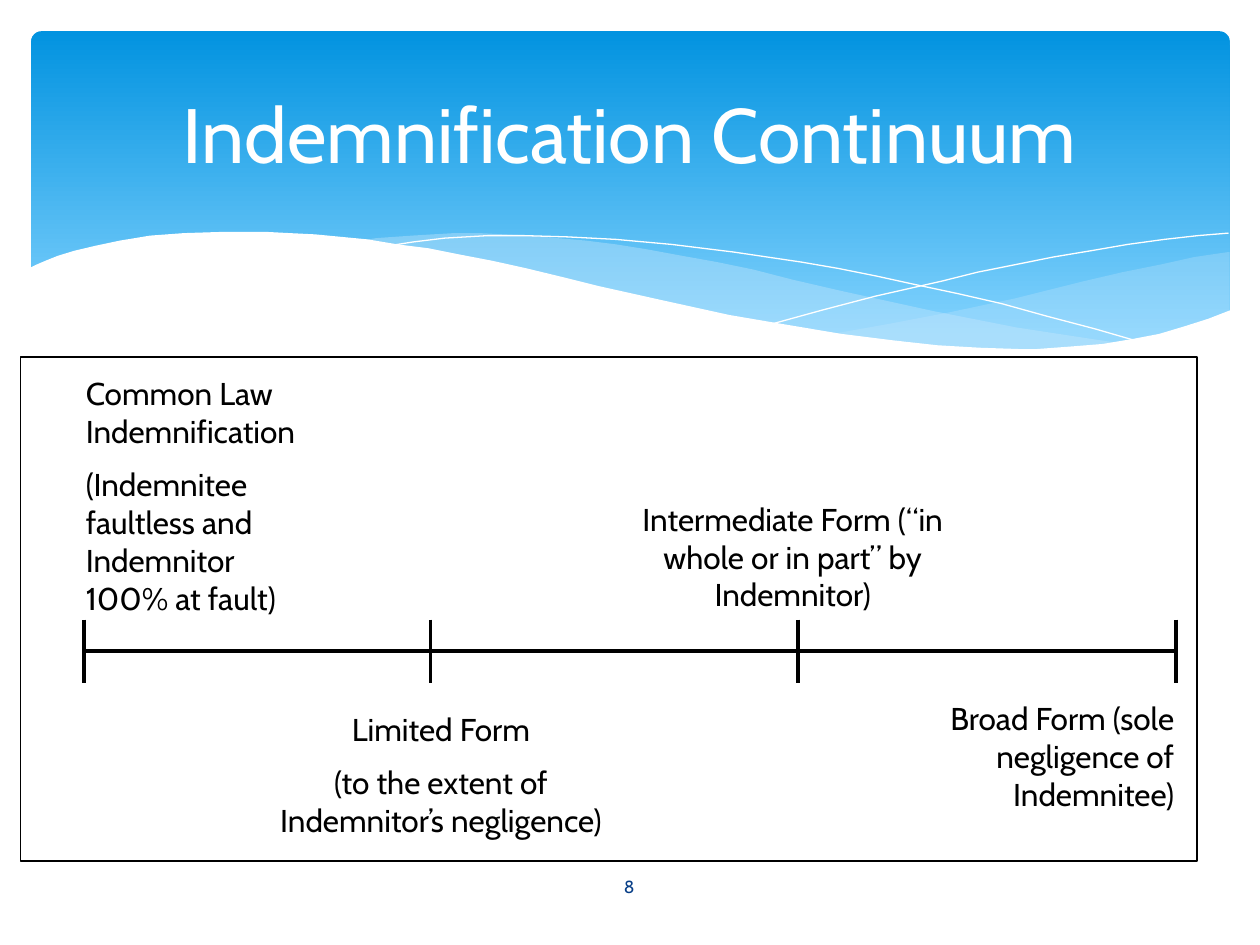
from lxml import etree
from pptx import Presentation
from pptx.dml.color import RGBColor
from pptx.enum.shapes import MSO_CONNECTOR, MSO_SHAPE
from pptx.enum.text import MSO_ANCHOR as ANCHOR, MSO_AUTO_SIZE as AUTO, PP_ALIGN as ALIGN
from pptx.oxml.ns import qn
from pptx.util import Cm, Pt

WHITE = RGBColor(0xFF, 0xFF, 0xFF)
BLACK = RGBColor(0x00, 0x00, 0x00)
SKY_TOP = RGBColor(0x02, 0x93, 0xE0)
SKY_BOTTOM = RGBColor(0x83, 0xD3, 0xFE)
MIST = RGBColor(0xC6, 0xE7, 0xFC)
NAVY = RGBColor(0x07, 0x3E, 0x87)
FONT = "Cabin"
HUNDREDTH_INCH = Cm(2.54) / 100

RIGHT_WAVE = [
    (975, 200), (948, 204), (921, 210), (891, 216), (861, 223), (805, 237), (753, 248),
    (706, 257), (661, 265), (691, 269), (719, 271), (745, 275), (769, 277), (803, 278),
    (835, 277), (863, 275), (889, 272), (913, 267), (935, 262), (949, 257), (963, 252),
    (976, 247), (976, 200),
]
LEFT_WAVE = [
    (893, 273), (866, 269), (807, 260), (741, 247), (668, 231), (629, 222), (598, 214),
    (569, 208), (541, 203), (514, 198), (489, 194), (465, 191), (442, 189), (420, 187),
    (399, 186), (380, 185), (361, 185), (328, 187), (299, 189), (286, 191), (323, 196),
    (362, 203), (404, 211), (449, 222), (491, 232), (530, 240), (566, 248), (601, 255),
    (634, 261), (665, 266), (695, 270), (722, 274), (748, 276), (773, 277), (796, 278),
    (828, 278), (857, 277), (876, 275),
]
FALLING_LINE = [
    (309, 195), (328, 192), (353, 189), (387, 187), (416, 187), (450, 188), (489, 190),
    (533, 194), (582, 200), (636, 208), (665, 213), (695, 219), (727, 226), (760, 233),
    (795, 241), (831, 251), (869, 261), (907, 272),
]
RISING_LINE = [
    (613, 257), (653, 246), (695, 235), (748, 223), (776, 216), (806, 210), (836, 204),
    (866, 199), (895, 194), (924, 190), (951, 187), (975, 185),
]
WHITE_WAVE = [
    (977, 246), (959, 253), (940, 259), (920, 265), (899, 269), (875, 273), (850, 275),
    (823, 277), (809, 277), (778, 276), (744, 274), (708, 270), (668, 265), (626, 258),
    (579, 250), (529, 239), (475, 227), (447, 220), (418, 213), (391, 207), (365, 202),
    (340, 197), (316, 194), (292, 190), (271, 188), (250, 186), (230, 185), (211, 184),
    (177, 184), (146, 185), (119, 187), (95, 191), (76, 195), (59, 199), (46, 203),
    (36, 207), (29, 210), (23, 213), (23, 329), (977, 329),
]


def add_curve(shapes, points, closed):
    builder = shapes.build_freeform(*points[0], scale=HUNDREDTH_INCH)
    builder.add_line_segments(points[1:], close=closed)
    sp = builder.convert_to_shape()
    sp.shadow.inherit = False
    return sp


def write_paragraphs(tf, texts, align, size, color):
    tf.word_wrap = True
    tf.text = "\n".join(texts)
    for i, p in enumerate(tf.paragraphs):
        p.alignment = align
        p.font.name, p.font.size = FONT, Pt(size)
        p.font.color.rgb = color
        if i:
            p.space_before = Pt(9)


prs = Presentation()
prs.slide_width, prs.slide_height = Cm(25.4), Cm(19.05)
s = prs.slides.add_slide(prs.slide_layouts[5])
shapes = s.shapes

banner = shapes.add_shape(MSO_SHAPE.ROUNDED_RECTANGLE, Cm(0.63), Cm(0.63), Cm(24.16), Cm(6.86))
banner.adjustments[0] = 0.03
banner.shadow.inherit = False
banner.line.fill.background()
banner.fill.gradient()
banner.fill.gradient_angle = 270
for stop, position, color in zip(banner.fill.gradient_stops, (0, 0.9), (SKY_TOP, SKY_BOTTOM)):
    stop.position = position
    stop.color.rgb = color

for points, opacity in ((RIGHT_WAVE, 29), (LEFT_WAVE, 40)):
    wave = add_curve(shapes, points, True)
    wave.line.fill.background()
    wave.fill.solid()
    wave.fill.fore_color.rgb = MIST
    clr = wave.element.spPr.find(qn("a:solidFill")).find(qn("a:srgbClr"))
    etree.SubElement(clr, qn("a:alpha"), val=str(opacity * 1000))

for points in (FALLING_LINE, RISING_LINE):
    curve = add_curve(shapes, points, False)
    curve.fill.background()
    curve.line.color.rgb = WHITE
    curve.line.width = Pt(0)

white_wave = add_curve(shapes, WHITE_WAVE, True)
white_wave.line.fill.background()
white_wave.fill.solid()
white_wave.fill.fore_color.rgb = WHITE

title = shapes.title
title.left, title.top, title.width, title.height = Cm(1.27), Cm(0.94), Cm(22.86), Cm(3.48)
title.text_frame.vertical_anchor = ANCHOR.MIDDLE
write_paragraphs(title.text_frame, ["Indemnification Continuum"], ALIGN.CENTER, 44, WHITE)
title.element.getparent().append(title.element)

number = shapes.add_textbox(Cm(11.07), Cm(17.37), Cm(3.23), Cm(1.02))
number.text_frame.vertical_anchor = ANCHOR.MIDDLE
write_paragraphs(number.text_frame, ["8"], ALIGN.CENTER, 10, NAVY)

frame = shapes.add_shape(MSO_SHAPE.RECTANGLE, Cm(0.42), Cm(7.2), Cm(23.71), Cm(10.16))
frame.shadow.inherit = False
frame.fill.solid()
frame.fill.fore_color.rgb = WHITE
frame.line.color.rgb = BLACK
frame.line.width = Pt(0.75)

ticks = [1.69, 8.68, 16.09, 23.71]
lines = [(ticks[0], 13.12, ticks[-1], 13.12)] + [(x, 12.49, x, 13.76) for x in ticks]
for ends in lines:
    line = shapes.add_connector(MSO_CONNECTOR.STRAIGHT, *map(Cm, ends))
    line.line.color.rgb = BLACK
    line.line.width = Pt(2)
    etree.SubElement(line.element.spPr, qn("a:effectLst"))

labels = [
    ((1.48, 7.41, 5.08, 5.26), ALIGN.LEFT,
     ["Common Law Indemnification", "(Indemnitee faultless and Indemnitor 100% at fault)"]),
    ((4.87, 14.18, 8.04, 2.92), ALIGN.CENTER,
     ["Limited Form", "(to the extent of Indemnitor’s negligence)"]),
    ((12.7, 9.95, 6.56, 2.54), ALIGN.CENTER,
     ["Intermediate Form (“in whole or in part” by Indemnitor)"]),
    ((18.2, 13.97, 5.72, 2.54), ALIGN.RIGHT,
     ["Broad Form (sole negligence of Indemnitee)"]),
]
for box, align, texts in labels:
    label = shapes.add_textbox(*map(Cm, box))
    label.text_frame.auto_size = AUTO.SHAPE_TO_FIT_TEXT
    write_paragraphs(label.text_frame, texts, align, 18, BLACK)

prs.save("out.pptx")
